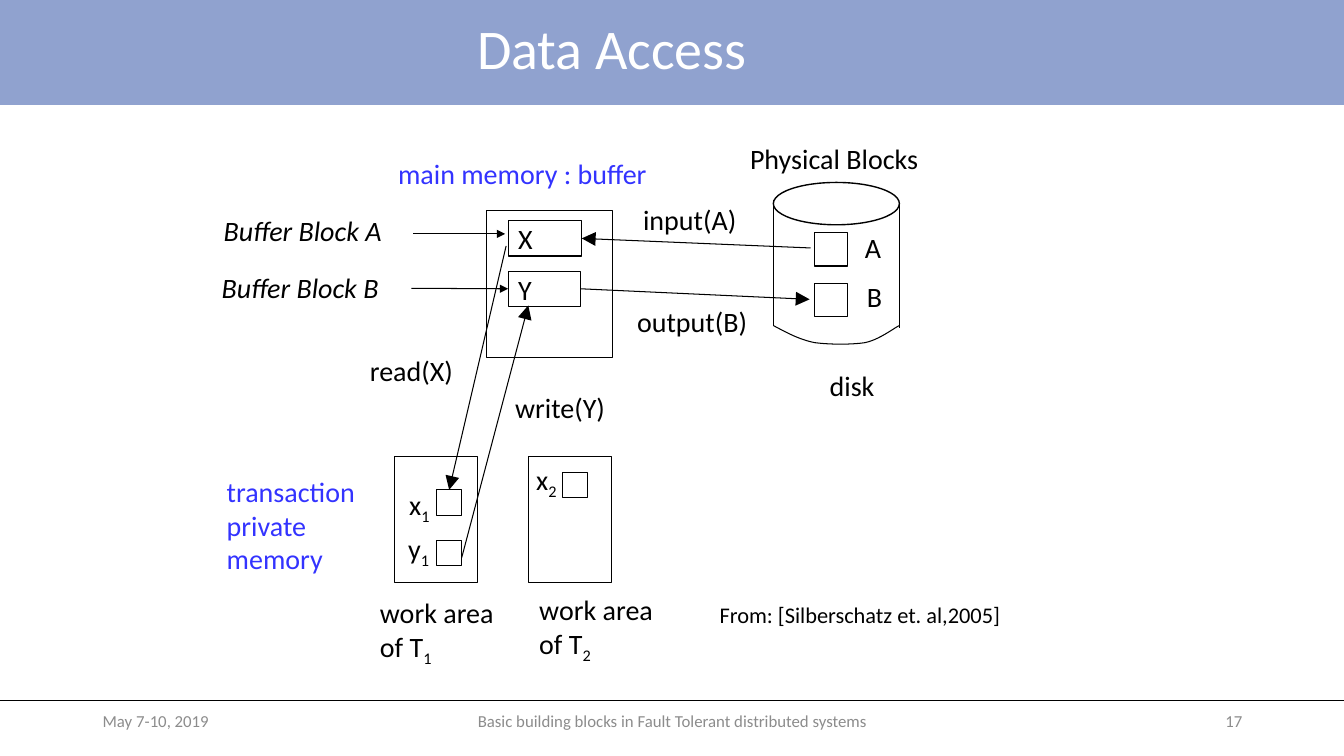
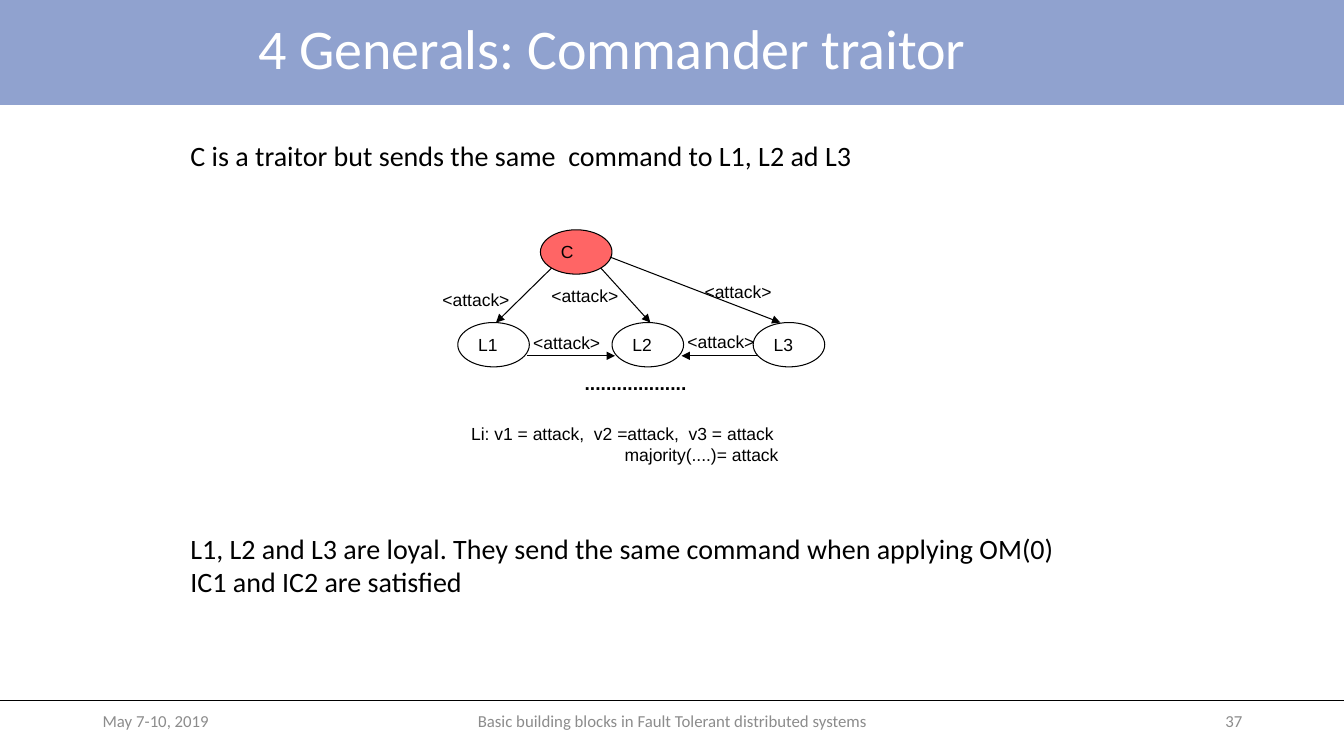
from lxml import etree
from pptx import Presentation
from pptx import util as u
from pptx.dml.color import RGBColor
from pptx.enum import shapes, text
from pptx.oxml import ns

BAND = RGBColor(0x90, 0xA2, 0xCF)
WHITE = RGBColor(0xFF, 0xFF, 0xFF)
BLACK = RGBColor(0, 0, 0)
GRAY = RGBColor(0x8C, 0x8C, 0x8C)
BLUE = RGBColor(0x33, 0x33, 0xFF)
RED = RGBColor(0xFF, 0x65, 0x65)

RECT = shapes.MSO_SHAPE.RECTANGLE
OVAL = shapes.MSO_SHAPE.OVAL
LEFT, CENTER, RIGHT = text.PP_ALIGN.LEFT, text.PP_ALIGN.CENTER, text.PP_ALIGN.RIGHT
MIDDLE = text.MSO_ANCHOR.MIDDLE
WIDTH, HEIGHT = 13.33, 7.5
FOOTER_Y = 6.95


def inches(*values):
    return [u.Inches(v) for v in values]


def write(tf, content, size=20, color=BLACK, font="Calibri", align=LEFT,
          bold=False, italic=False, spacing=None):
    for i, line in enumerate(content.split("\n")):
        p = tf.add_paragraph() if i else tf.paragraphs[0]
        p.alignment = align
        p.line_spacing = spacing
        p.font.size = u.Pt(size)
        p.font.name = font
        p.font.color.rgb = color
        p.font.bold = bold
        p.font.italic = italic
        for j, part in enumerate(line.split("_")):
            r = p.add_run()
            r.text = part
            if j:
                r._r.get_or_add_rPr().set("baseline", "-25000")


def add_label(s, box, content, wrap=False, anchor=None, **style):
    tf = s.shapes.add_textbox(*inches(*box)).text_frame
    tf.word_wrap = wrap
    if not wrap:
        tf.auto_size = text.MSO_AUTO_SIZE.SHAPE_TO_FIT_TEXT
    if anchor is not None:
        tf.vertical_anchor = anchor
    write(tf, content, **style)


def outline(sp, fill=None, weight=0.75):
    sp.shadow.inherit = False
    if fill is None:
        sp.fill.background()
    else:
        sp.fill.solid()
        sp.fill.fore_color.rgb = fill
    sp.line.color.rgb = BLACK
    sp.line.width = u.Pt(weight)


def add_box(s, box, content="", kind=RECT, fill=None, weight=0.75, **style):
    sp = s.shapes.add_shape(kind, *inches(*box))
    outline(sp, fill, weight)
    if content:
        sp.text_frame.vertical_anchor = MIDDLE
        write(sp.text_frame, content, **style)
    return sp


def add_line(s, start, end, head=None, weight=0.75, begin=None, finish=None):
    c = s.shapes.add_connector(shapes.MSO_CONNECTOR.STRAIGHT, *inches(*start, *end))
    c.line.color.rgb = BLACK
    c.line.width = u.Pt(weight)
    if head:
        ln = c.line._get_or_add_ln()
        etree.SubElement(ln, ns.qn("a:tailEnd"), type="triangle", w=head, len=head)
    etree.SubElement(c._element.spPr, ns.qn("a:effectLst"))
    if begin:
        c.begin_connect(*begin)
    if finish:
        c.end_connect(*finish)


def add_curve(s, start, segments, steps=10):
    points = []
    p0 = start
    for p1, p2, p3 in segments:
        for i in range(1, steps + 1):
            t = i / steps
            v = 1 - t
            points.append(inches(*(
                v**3 * a + 3 * v * v * t * b + 3 * v * t * t * c + t**3 * d
                for a, b, c, d in zip(p0, p1, p2, p3))))
        p0 = p3
    builder = s.shapes.build_freeform(*inches(*start))
    builder.add_line_segments(points, close=False)
    outline(builder.convert_to_shape())


def add_slide(prs, title, number):
    s = prs.slides.add_slide(prs.slide_layouts[6])
    band = s.shapes.add_shape(RECT, *inches(0, 0, WIDTH, 1.04))
    band.shadow.inherit = False
    band.fill.solid()
    band.fill.fore_color.rgb = BAND
    band.line.fill.background()
    add_line(s, (0, FOOTER_Y), (WIDTH, FOOTER_Y), weight=0.5)
    add_label(s, (0, 0, 12.14, 1.02), title, wrap=True, anchor=MIDDLE,
              size=40, color=WHITE, align=CENTER, spacing=0.9)
    for x, w, content, align in (
            (0.92, 3, "May 7-10, 2019", LEFT),
            (4.42, 4.5, "Basic building blocks in Fault Tolerant distributed systems", CENTER),
            (9.42, 3, number, RIGHT)):
        add_label(s, (x, FOOTER_Y, w, 0.4), content, wrap=True, anchor=MIDDLE,
                  size=12, color=GRAY, align=align)
    return s


def add_disk(s):
    left, right = 7.67, 8.92
    add_box(s, (left, 1.81, right - left, 0.42), kind=OVAL, weight=1)
    add_line(s, (left, 1.98), (left, 3.23))
    add_line(s, (right, 2), (right, 3.25))
    add_curve(s, (left, 3.23), (
        ((7.8, 3.3), (7.93, 3.37), (8.08, 3.4)),
        ((8.24, 3.42), (8.44, 3.42), (8.58, 3.4)),
        ((8.72, 3.37), (8.86, 3.26), (right, 3.23))))
    for y in (2.31, 2.81):
        add_box(s, (8.08, y, 0.33, 0.33))


def build_data_access(prs):
    s = add_slide(prs, "Data Access", "17")
    add_box(s, (4.83, 2.09, 1.25, 1.46))
    block_x = add_box(s, (5.04, 2.19, 0.73, 0.35), "X")
    block_y = add_box(s, (5.04, 2.69, 0.72, 0.35), "Y")
    add_disk(s)
    for x in (3.91, 5.24):
        add_box(s, (x, 4.53, 0.83, 1.25))
    cell_x1, _, _ = [add_box(s, (x, y, 0.25, 0.25))
                     for x, y in ((4.33, 4.86), (4.33, 5.36), (5.58, 4.69))]

    for x, y, w, content in (
            (8.48, 2.24, 0.36, "A"),
            (8.5, 2.72, 0.35, "B"),
            (3.96, 4.79, 0.42, "x_1"),
            (3.95, 5.22, 0.46, "y_1"),
            (5.22, 4.54, 0.42, "x_2"),
            (6.28, 1.96, 1.17, "input(A)"),
            (6.22, 2.97, 1.42, "output(B)"),
            (3.57, 3.46, 1.04, "read(X)"),
            (5.01, 3.83, 1.11, "write(Y)"),
            (8.13, 3.61, 0.65, "disk"),
            (7.34, 1.35, 1.89, "Physical Blocks")):
        add_label(s, (x, y, w, 0.44), content)
    add_label(s, (3.67, 5.86, 1.5, 0.77), "work area\nof T_1")
    add_label(s, (5.25, 5.83, 1.34, 0.77), "work area\nof T_2")
    add_label(s, (3.85, 1.5, 2.7, 0.44), "main memory : buffer", color=BLUE)
    add_label(s, (2.15, 4.66, 1.49, 1.11), "transaction\nprivate\nmemory", color=BLUE)
    add_label(s, (2.12, 2.07, 1.85, 0.44), "Buffer Block A", italic=True)
    add_label(s, (2.1, 2.63, 1.78, 0.44), "Buffer Block B", italic=True)
    add_label(s, (7.04, 5.91, 3.1, 0.37), "From: [Silberschatz et. al,2005]",
              wrap=True, size=16)

    add_line(s, (4.1, 2.32), (5.01, 2.32), "med")
    add_line(s, (4.08, 2.86), (5.04, 2.86), "med", finish=(block_y, 1))
    add_line(s, (8.04, 2.46), (5.77, 2.36), "lg", finish=(block_x, 3))
    add_line(s, (5.76, 2.86), (8.03, 2.97), "lg", begin=(block_y, 3))
    add_line(s, (5.02, 2.44), (4.45, 4.86), "lg", finish=(cell_x1, 0))
    add_line(s, (4.58, 5.53), (5.24, 3.03), "lg")


def build_generals(prs):
    s = add_slide(prs, "4 Generals: Commander traitor", "37")
    small = {"size": 12.5, "font": "Arial"}
    for x, y, name, fill in (
            (5.36, 2.28, "C", RED),
            (4.54, 3.2, "L1", WHITE),
            (6.07, 3.2, "L2", WHITE),
            (7.47, 3.2, "L3", WHITE)):
        add_box(s, (x, y, 0.71, 0.44), name, OVAL, fill, **small)
    for start, end in (
            ((5.47, 2.66), (4.92, 3.2)),
            ((5.96, 2.66), (6.45, 3.2)),
            ((6.05, 2.55), (7.74, 3.2)),
            ((5.23, 3.53), (6.1, 3.53)),
            ((7.52, 3.53), (6.76, 3.53))):
        add_line(s, start, end, "med")
    for x, y in ((4.29, 2.82), (5.37, 2.78), (6.89, 2.74), (5.19, 3.24), (6.72, 3.23)):
        add_label(s, (x, y, 0.87, 0.31), "<attack>", **small)
    add_label(s, (5.7, 3.63, 1.23, 0.34), "...................",
              size=13.8, font="Arial", bold=True)
    add_label(s, (4.28, 4.15, 3.54, 0.52),
              "Li: v1 = attack,  v2 =attack,  v3 = attack \nmajority(....)= attack",
              wrap=True, align=RIGHT, **small)
    add_label(s, (1.79, 1.32, 7.35, 0.44),
              "C is a traitor but sends the same  command to L1, L2 ad L3", wrap=True)
    add_label(s, (1.79, 5.22, 9.47, 0.77),
              "L1, L2 and L3 are loyal. They send the same command when applying OM(0)\n"
              "IC1 and IC2 are satisfied", wrap=True)


def main():
    prs = Presentation()
    prs.slide_width, prs.slide_height = inches(WIDTH, HEIGHT)
    build_data_access(prs)
    build_generals(prs)
    prs.save("out.pptx")


if __name__ == "__main__":
    main()
